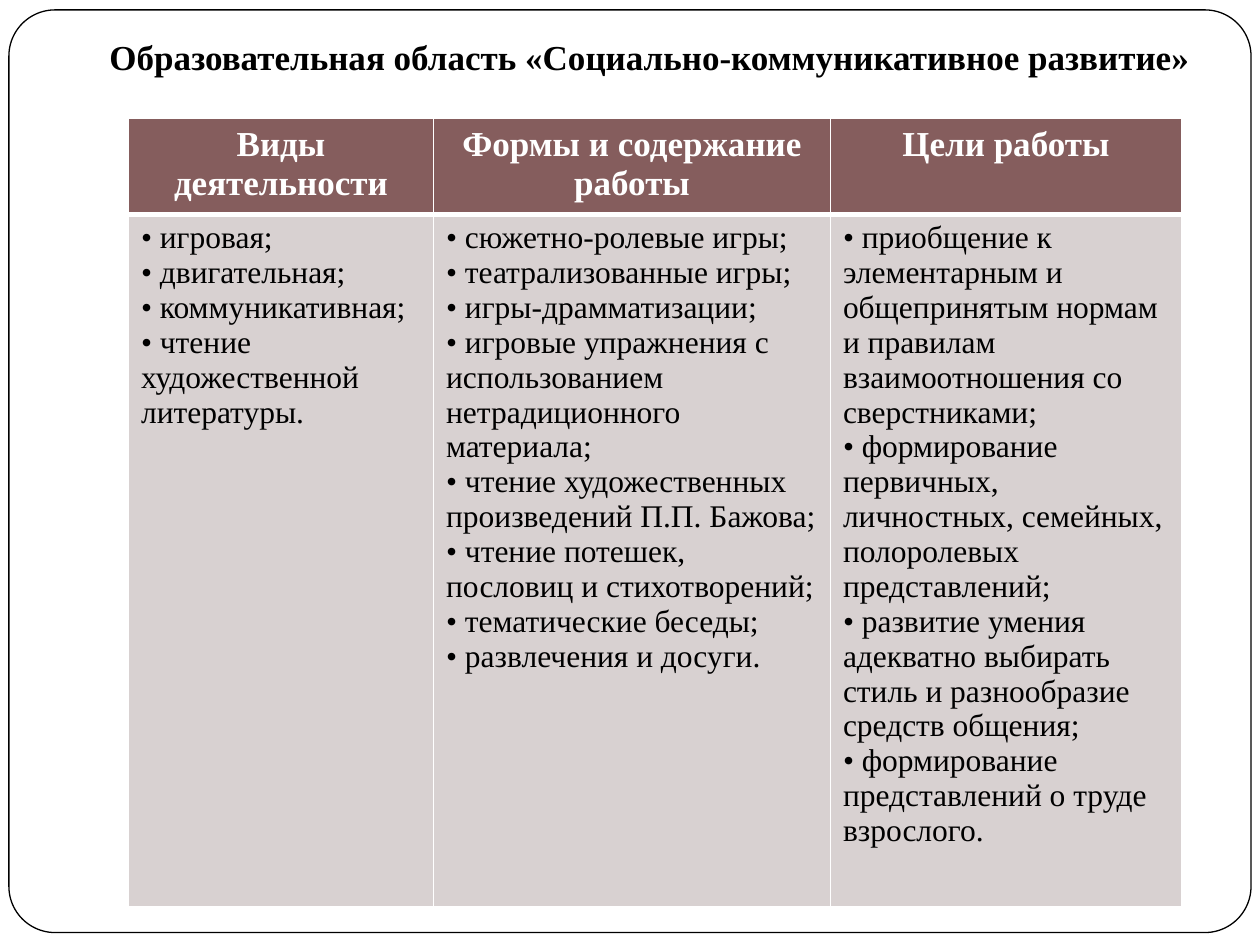
import pptx
import pptx.dml.color
import pptx.enum.shapes
import pptx.enum.text
import pptx.oxml.ns
import pptx.util
from lxml import etree

Cm = pptx.util.Cm
Pt = pptx.util.Pt
FONT = "Times New Roman"
CENTER = pptx.enum.text.PP_ALIGN.CENTER

COLUMNS = [
    ("Виды деятельности", 6.15, [
        "игровая;",
        "двигательная;",
        "коммуникативная;",
        "чтение художественной литературы.",
    ]),
    ("Формы и содержание работы", 8, [
        "сюжетно-ролевые игры;",
        "театрализованные игры;",
        "игры-драмматизации;",
        "игровые упражнения с использованием нетрадиционного материала;",
        "чтение художественных произведений П.П. Бажова;",
        "чтение потешек, пословиц и стихотворений;",
        "тематические беседы;",
        "развлечения и досуги.",
    ]),
    ("Цели работы", 7.08, [
        "приобщение к элементарным и общепринятым нормам и правилам "
        "взаимоотношения со сверстниками;",
        "формирование первичных, личностных, семейных, полоролевых представлений;",
        "развитие умения адекватно выбирать стиль и разнообразие средств общения;",
        "формирование представлений о труде взрослого.",
    ]),
]


def rgb(color):
    return pptx.dml.color.RGBColor.from_string(color)


def sub(parent, tag, **attrs):
    return etree.SubElement(parent, pptx.oxml.ns.qn(tag), attrs)


def style(p, size, color, bold=False):
    for r in p.runs:
        r.font.name = FONT
        r.font.size = Pt(size)
        r.font.bold = bold
        r.font.color.rgb = rgb(color)


def add_frame(s, left, top, width, height):
    sp = s.shapes.add_shape(
        pptx.enum.shapes.MSO_SHAPE.ROUNDED_RECTANGLE, left, top, width, height)
    sp.adjustments[0] = 0.05
    sp.shadow.inherit = False
    sp.fill.solid()
    sp.fill.fore_color.rgb = rgb("FFFFFF")
    sp.line.color.rgb = rgb("000000")
    sp.line.width = Pt(0.75)
    s.shapes._spTree.insert(2, sp._element)


def add_title(s, left, top, width, height):
    sp = s.shapes.title
    sp.left, sp.top, sp.width, sp.height = left, top, width, height
    tf = sp.text_frame
    tf.text = "Образовательная область «Социально-коммуникативное развитие»"
    tf.auto_size = pptx.enum.text.MSO_AUTO_SIZE.NONE
    tf.vertical_anchor = pptx.enum.text.MSO_ANCHOR.TOP
    p = tf.paragraphs[0]
    p.alignment = CENTER
    style(p, 20, "000000", True)


def format_cell(cell, color, top_width, bottom_width):
    tcPr = cell._tc.get_or_add_tcPr()
    widths = {"a:lnL": 1, "a:lnR": 1, "a:lnT": top_width, "a:lnB": bottom_width}
    for tag, width in widths.items():
        ln = sub(tcPr, tag, w=str(Pt(width)))
        sub(sub(ln, "a:solidFill"), "a:srgbClr", val="FFFFFF")
    cell.fill.solid()
    cell.fill.fore_color.rgb = rgb(color)


def add_bullet(p):
    pPr = p._p.get_or_add_pPr()
    pPr.set("marL", "0")
    pPr.set("indent", str(-Cm(0.3)))
    sub(sub(pPr, "a:buClr"), "a:srgbClr", val="000000")
    sub(pPr, "a:buFont", typeface=FONT)
    sub(pPr, "a:buChar", char="•")


def add_activity_table(s, left, top, width, height):
    table = s.shapes.add_table(2, len(COLUMNS), left, top, width, height).table
    header_height = Cm(1.93)
    table.rows[0].height = header_height
    table.rows[1].height = height - header_height
    for i, (heading, col_width, items) in enumerate(COLUMNS):
        table.columns[i].width = Cm(col_width)
        head, body = table.cell(0, i), table.cell(1, i)
        format_cell(head, "855D5D", 1, 3)
        format_cell(body, "D8D1D1", 3, 1)
        head.text_frame.text = heading
        p = head.text_frame.paragraphs[0]
        p.alignment = CENTER
        style(p, 20, "FFFFFF", True)
        body.text_frame.text = "\n".join(" " + item for item in items)
        for p in body.text_frame.paragraphs:
            add_bullet(p)
            style(p, 18, "000000")


def main():
    prs = pptx.Presentation()
    prs.slide_width, prs.slide_height = Cm(25.4), Cm(19.05)
    s = prs.slides.add_slide(prs.slide_layouts[5])
    add_frame(s, Cm(0.18), Cm(0.2), Cm(25.04), Cm(18.6))
    add_title(s, Cm(1.78), Cm(0.58), Cm(22.63), Cm(1.12))
    table_width = Cm(sum(col_width for _, col_width, _ in COLUMNS))
    add_activity_table(s, Cm(2.59), Cm(2.39), table_width, Cm(15.88))
    prs.save("out.pptx")


if __name__ == "__main__":
    main()
